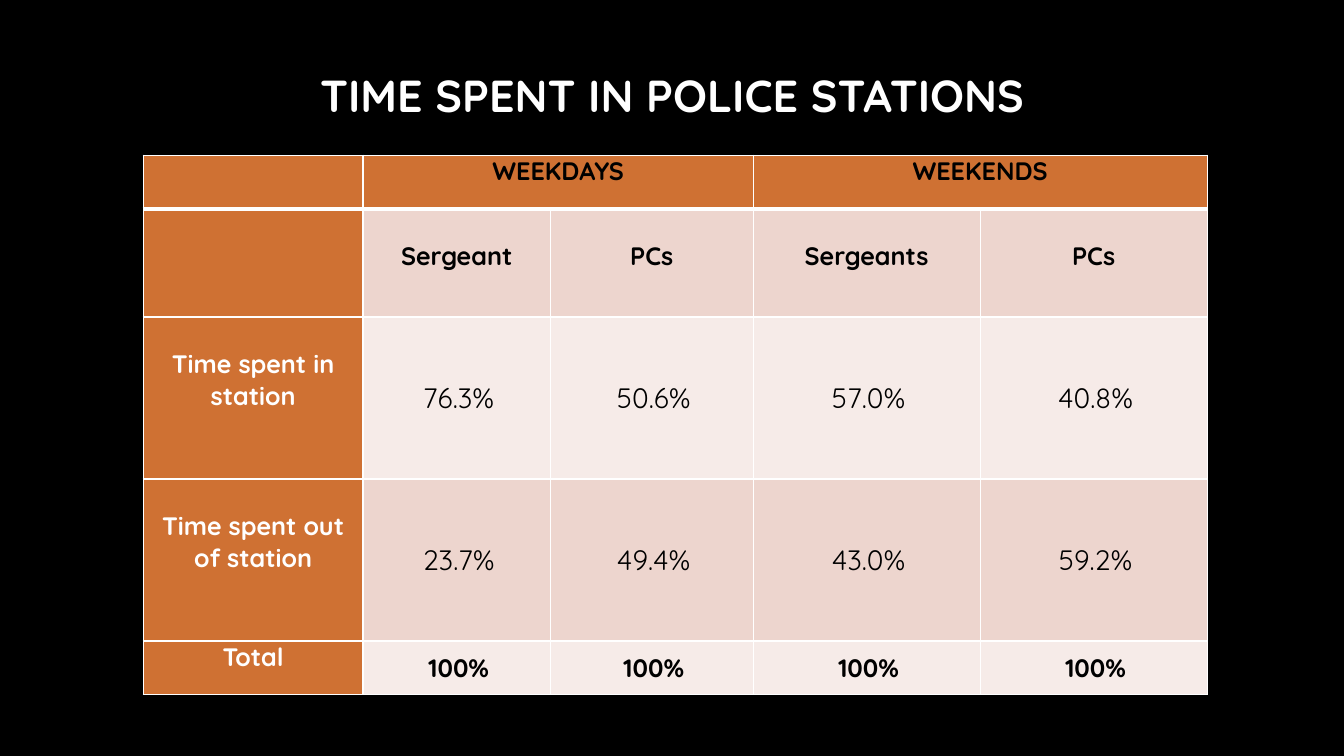
from dataclasses import dataclass

from lxml.etree import SubElement
from pptx import Presentation
from pptx.dml.color import RGBColor
from pptx.enum.text import MSO_ANCHOR, PP_ALIGN
from pptx.oxml.ns import qn
from pptx.slide import Slide
from pptx.table import Table, _Cell
from pptx.text.text import TextFrame
from pptx.util import Cm, Pt

BLACK = RGBColor(0x00, 0x00, 0x00)
WHITE = RGBColor(0xFF, 0xFF, 0xFF)
ORANGE = RGBColor(0xCF, 0x71, 0x33)
ROSE = RGBColor(0xED, 0xD5, 0xCE)
PALE_ROSE = RGBColor(0xF6, 0xEB, 0xE8)

FONT_NAME = "Quicksand"
COLUMN_WIDTHS = (5.54, 4.72, 5.11, 5.72, 5.72)
ROW_UNIT = 1.36
LINE_HEIGHT = 0.79
SIDE_MARGIN = 0.18
THIN_BORDER = 1
HEADER_BORDER = 3


@dataclass(frozen=True)
class TableRow:
    label: str
    values: tuple[str, ...]
    units: int
    fill: RGBColor
    size: int = 18
    bold: bool = True
    anchor: MSO_ANCHOR = MSO_ANCHOR.MIDDLE
    top_margin: float = 0
    label_top_margin: float = 0
    indent: float = 0.1


ROWS = (
    TableRow("", ("WEEKDAYS", "", "WEEKENDS", ""), 1, ORANGE,
             anchor=MSO_ANCHOR.TOP, indent=0),
    TableRow("", ("Sergeant", "PCs", "Sergeants", "PCs"), 2, ROSE,
             anchor=MSO_ANCHOR.TOP, top_margin=LINE_HEIGHT, indent=0),
    TableRow("Time spent in station", ("76.3%", "50.6%", "57.0%", "40.8%"), 3,
             PALE_ROSE, size=20, bold=False, label_top_margin=LINE_HEIGHT),
    TableRow("Time spent out of station", ("23.7%", "49.4%", "43.0%", "59.2%"), 3,
             ROSE, size=20, bold=False, label_top_margin=LINE_HEIGHT),
    TableRow("Total", ("100%",) * 4, 1, PALE_ROSE),
)


def write_text(text_frame: TextFrame, text: str, *, size: int,
               color: RGBColor, bold: bool = True) -> None:
    paragraph = text_frame.paragraphs[0]
    paragraph.alignment = PP_ALIGN.CENTER
    run = paragraph.add_run()
    run.text = text
    run.font.name = FONT_NAME
    run.font.size = Pt(size)
    run.font.bold = bold
    run.font.color.rgb = color


def add_border(cell: _Cell, side: str, width: float) -> None:
    properties = cell._tc.get_or_add_tcPr()
    line = SubElement(properties, qn(f"a:ln{side}"), w=str(Pt(width)))
    solid_fill = SubElement(line, qn("a:solidFill"))
    SubElement(solid_fill, qn("a:srgbClr"), val=str(WHITE))


def format_cell(cell: _Cell, row_index: int, fill: RGBColor) -> None:
    top_width = HEADER_BORDER if row_index == 1 else THIN_BORDER
    bottom_width = HEADER_BORDER if row_index == 0 else THIN_BORDER
    for side, width in (("L", THIN_BORDER), ("R", THIN_BORDER),
                        ("T", top_width), ("B", bottom_width)):
        add_border(cell, side, width)
    cell.fill.solid()
    cell.fill.fore_color.rgb = fill
    cell.margin_left = cell.margin_right = Cm(SIDE_MARGIN)
    cell.margin_top = cell.margin_bottom = 0


def fill_row(table: Table, row_index: int, row: TableRow) -> None:
    table.rows[row_index].height = Cm(row.units * ROW_UNIT)
    label_cell = table.cell(row_index, 0)
    format_cell(label_cell, row_index, ORANGE)
    label_cell.margin_top = Cm(row.label_top_margin)
    if row.label:
        write_text(label_cell.text_frame, row.label, size=18, color=WHITE)
    for column_index, value in enumerate(row.values, start=1):
        cell = table.cell(row_index, column_index)
        format_cell(cell, row_index, row.fill)
        cell.margin_left = Cm(SIDE_MARGIN + row.indent)
        cell.margin_top = Cm(row.top_margin)
        cell.vertical_anchor = row.anchor
        if value:
            write_text(cell.text_frame, value, size=row.size, color=BLACK, bold=row.bold)


def add_title(slide: Slide) -> None:
    title = slide.shapes.add_textbox(Cm(3.61), Cm(1.27), Cm(26.67), Cm(2.21))
    title.text_frame.word_wrap = True
    title.text_frame.vertical_anchor = MSO_ANCHOR.MIDDLE
    write_text(title.text_frame, "TIME SPENT IN POLICE STATIONS", size=32, color=WHITE)


def add_time_table(slide: Slide) -> None:
    height = ROW_UNIT * sum(row.units for row in ROWS)
    table = slide.shapes.add_table(
        len(ROWS), len(COLUMN_WIDTHS),
        Cm(3.61), Cm(3.91), Cm(sum(COLUMN_WIDTHS)), Cm(height),
    ).table
    table.first_row = False
    table.horz_banding = False
    for column, width in zip(table.columns, COLUMN_WIDTHS):
        column.width = Cm(width)
    for row_index, row in enumerate(ROWS):
        fill_row(table, row_index, row)
    for first_column in (1, 3):
        table.cell(0, first_column).merge(table.cell(0, first_column + 1))


def main() -> None:
    presentation = Presentation()
    presentation.slide_width = Cm(33.87)
    presentation.slide_height = Cm(19.05)
    slide = presentation.slides.add_slide(presentation.slide_layouts[6])
    slide.background.fill.solid()
    slide.background.fill.fore_color.rgb = BLACK
    add_title(slide)
    add_time_table(slide)
    presentation.save("out.pptx")


if __name__ == "__main__":
    main()
